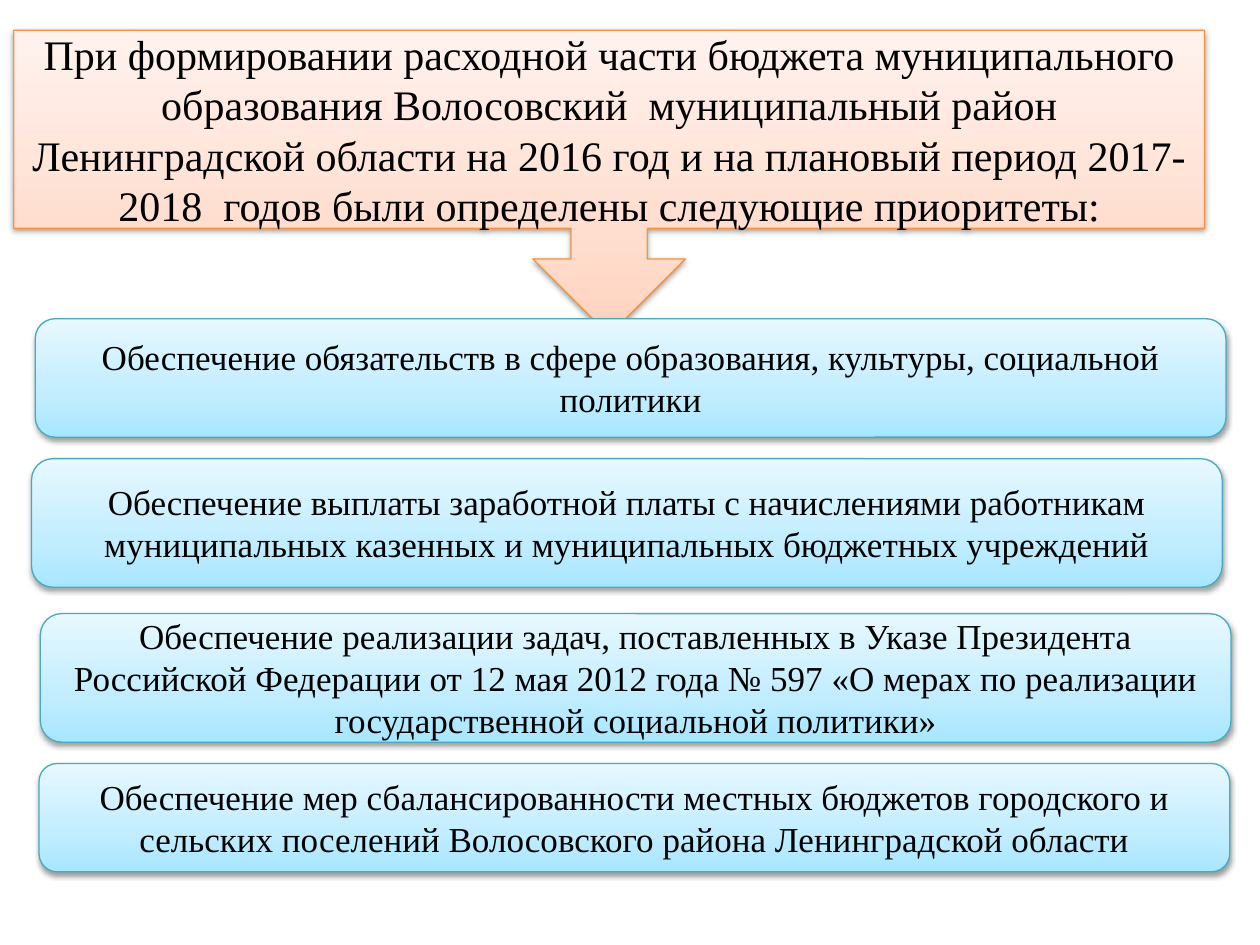
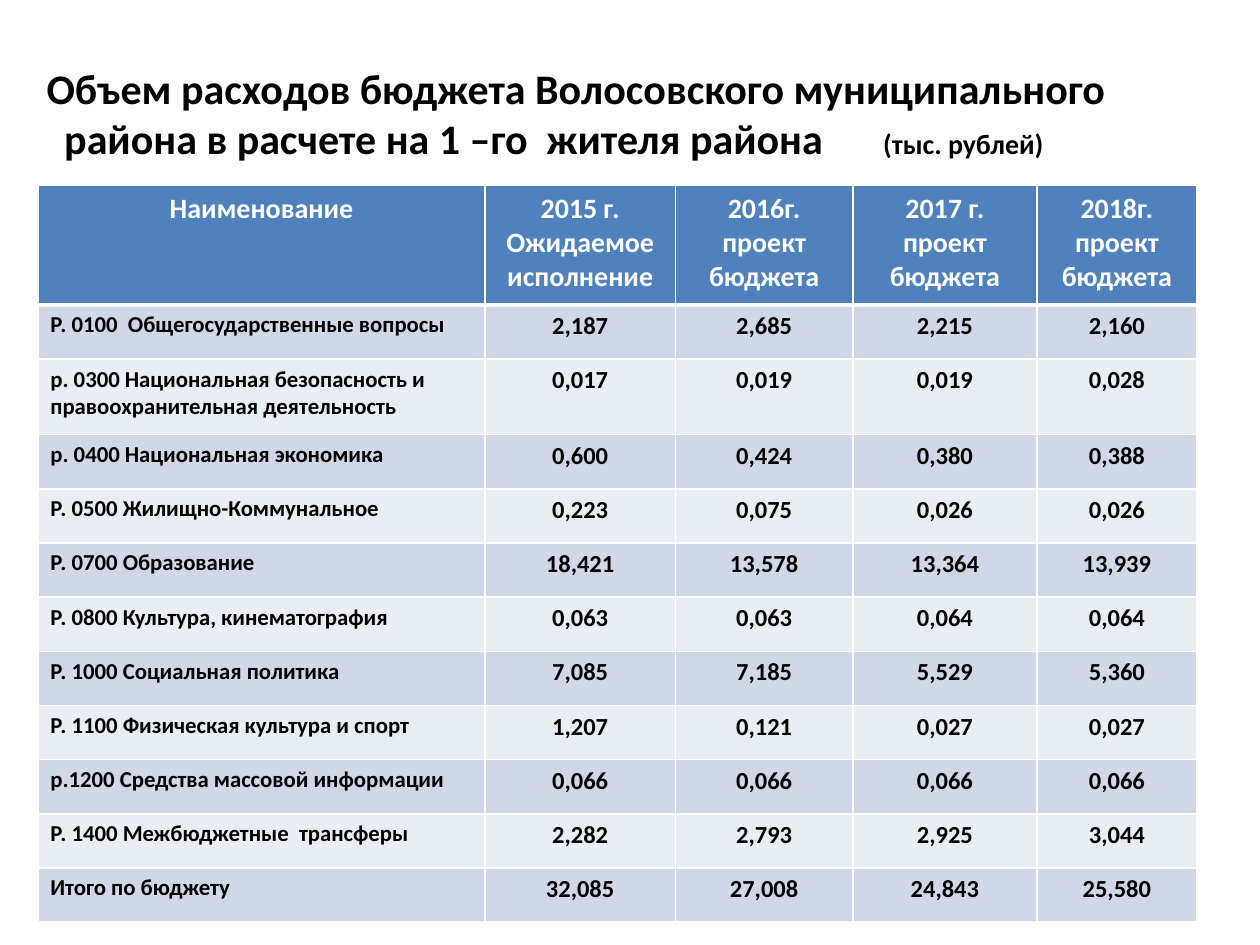
from copy import deepcopy

from pptx import Presentation
from pptx.dml.color import RGBColor
from pptx.enum.shapes import MSO_SHAPE
from pptx.enum.text import MSO_ANCHOR, PP_ALIGN
from pptx.oxml.ns import qn
from pptx.util import Inches, Pt
from lxml import etree

CALLOUT = MSO_SHAPE.DOWN_ARROW_CALLOUT
ROUND = MSO_SHAPE.ROUNDED_RECTANGLE
LEFT, CENTER = PP_ALIGN.LEFT, PP_ALIGN.CENTER
MIDDLE = MSO_ANCHOR.MIDDLE

BLACK = RGBColor(0x00, 0x00, 0x00)
WHITE = RGBColor(0xFF, 0xFF, 0xFF)
ORANGE = RGBColor(0xF6, 0x92, 0x40)
TEAL = RGBColor(0x46, 0xAA, 0xC5)
BLUE = RGBColor(0x4F, 0x81, 0xBD)
BANDS = RGBColor(0xD0, 0xD8, 0xE8), RGBColor(0xE9, 0xED, 0xF4)
PEACH = (RGBColor(0xFF, 0xD2, 0xBD), RGBColor(0xFF, 0xDE, 0xD0),
         RGBColor(0xFF, 0xF2, 0xED))
SKY = (RGBColor(0xA7, 0xE6, 0xFF), RGBColor(0xC1, 0xED, 0xFF),
       RGBColor(0xE7, 0xF8, 0xFF))
STOPS = 0, 0.35, 1

SERIF = {"name": "Times New Roman", "size": Pt(24)}
GOAL = SERIF | {"size": Pt(20)}
TITLE = {"name": "Calibri", "size": Pt(24), "bold": True}
UNIT = TITLE | {"size": Pt(16)}
HEAD = UNIT
LABEL = TITLE | {"size": Pt(13)}
VALUE = TITLE | {"size": Pt(14)}

INTRO = ("При формировании расходной части бюджета муниципального образования "
         "Волосовский  муниципальный район Ленинградской области на 2016 год и на "
         "плановый период 2017-2018  годов были определены следующие приоритеты:")
GOALS = [
    (0.28, 2.53, 0.94, "Обеспечение обязательств в сфере образования, культуры, "
     "социальной политики"),
    (0.25, 3.64, 1.02, "Обеспечение выплаты заработной платы с начислениями "
     "работникам муниципальных казенных и муниципальных бюджетных учреждений"),
    (0.32, 4.87, 1.02, "Обеспечение реализации задач, поставленных в Указе "
     "Президента Российской Федерации от 12 мая 2012 года № 597 «О мерах по "
     "реализации государственной социальной политики»"),
    (0.31, 6.06, 0.86, "Обеспечение мер сбалансированности местных бюджетов "
     "городского и сельских поселений Волосовского района Ленинградской области"),
]
WIDE = 9.45

COSTS = [
    ("Наименование", "2015 г.\nОжидаемое исполнение", "2016г.\nпроект бюджета",
     "2017 г. проект бюджета", "2018г. проект бюджета"),
    ("Р. 0100  Общегосударственные вопросы", "2,187", "2,685", "2,215", "2,160"),
    ("р. 0300 Национальная безопасность и правоохранительная деятельность",
     "0,017", "0,019", "0,019", "0,028"),
    ("р. 0400 Национальная экономика", "0,600", "0,424", "0,380", "0,388"),
    ("Р. 0500 Жилищно-Коммунальное", "0,223", "0,075", "0,026", "0,026"),
    ("Р. 0700 Образование", "18,421", "13,578", "13,364", "13,939"),
    ("Р. 0800 Культура, кинематография", "0,063", "0,063", "0,064", "0,064"),
    ("Р. 1000 Социальная политика", "7,085", "7,185", "5,529", "5,360"),
    ("Р. 1100 Физическая культура и спорт", "1,207", "0,121", "0,027", "0,027"),
    ("р.1200 Средства массовой информации", "0,066", "0,066", "0,066", "0,066"),
    ("Р. 1400 Межбюджетные  трансферы", "2,282", "2,793", "2,925", "3,044"),
    ("Итого по бюджету", "32,085", "27,008", "24,843", "25,580"),
]
COLS = 3.55, 1.51, 1.41, 1.46, 1.27
ROWS = [0.95, 0.43, 0.6] + [0.43] * 9


def add(parent, tag, **attrs):
    return etree.SubElement(parent, qn(tag), {k: str(v) for k, v in attrs.items()})


def style(font, form, color):
    for key, value in form.items():
        setattr(font, key, value)
    font.color.rgb = color


class Deck:
    def __init__(self):
        self.prs = Presentation()
        self.prs.slide_width, self.prs.slide_height = Inches(10), Inches(7.5)

    def page(self):
        self.slide = self.prs.slides.add_slide(self.prs.slide_layouts[6])

    def label(self, frame, text, form, color=BLACK, align=CENTER):
        frame.word_wrap = True
        frame.text = text
        for para in frame.paragraphs:
            para.alignment = align
            for run in para.runs:
                style(run.font, form, color)

    def blend(self, shape, colors):
        """Fill upwards with a three-stop gradient."""
        shape.fill.gradient()
        shape.fill.gradient_angle = 90
        stops = shape._element.spPr.find(qn("a:gradFill")).find(qn("a:gsLst"))
        stops.append(deepcopy(stops[0]))
        for stop, color, place in zip(shape.fill.gradient_stops, colors, STOPS):
            stop.color.rgb = color
            stop.position = place

    def shade(self, shape):
        shape.shadow.inherit = False
        effects = shape._element.spPr.find(qn("a:effectLst"))
        outer = add(effects, "a:outerShdw", blurRad=Pt(3.1), dist=Pt(1.6),
                    dir=5400000, rotWithShape=0)
        add(add(outer, "a:srgbClr", val=BLACK), "a:alpha", val=38000)

    def box(self, kind, left, top, width, height, text, form, colors, edge):
        shape = self.slide.shapes.add_shape(
            kind, *map(Inches, (left, top, width, height)))
        self.blend(shape, colors)
        shape.line.color.rgb = edge
        shape.line.width = Pt(0.75)
        self.shade(shape)
        shape.text_frame.vertical_anchor = MIDDLE
        self.label(shape.text_frame, text, form)

    def title(self, text, unit):
        """Add a title with a hanging indent and its unit at a tab stop."""
        frame = self.slide.shapes.add_textbox(
            *map(Inches, (0.07, 0.27, 9, 1.25))).text_frame
        frame.vertical_anchor = MIDDLE
        frame.margin_left = Inches(0.3)
        self.label(frame, text + "\t", TITLE, align=LEFT)
        para = frame.paragraphs[0]
        run = para.add_run()
        run.text = unit
        style(run.font, UNIT, BLACK)
        props = para._p.get_or_add_pPr()
        props.set("marL", str(Inches(0.14)))
        props.set("indent", str(-Inches(0.14)))
        add(add(props, "a:tabLst"), "a:tab", pos=Inches(7), algn="l")

    def rule(self, cell, row):
        """Draw white borders, with a thick one under the header."""
        props = cell._tc.get_or_add_tcPr()
        for side in "LRTB":
            thick = (row, side) in ((0, "B"), (1, "T"))
            line = add(props, "a:ln" + side, w=Pt(3 if thick else 1))
            add(add(line, "a:solidFill"), "a:srgbClr", val=WHITE)

    def table(self, left, top, cols, rows, data):
        table = self.slide.shapes.add_table(
            len(rows), len(cols),
            *map(Inches, (left, top, sum(cols), sum(rows)))).table
        for col, width in zip(table.columns, cols):
            col.width = Inches(width)
        for r, (height, texts) in enumerate(zip(rows, data)):
            table.rows[r].height = Inches(height)
            for c, text in enumerate(texts):
                cell = table.cell(r, c)
                self.rule(cell, r)
                cell.fill.solid()
                cell.fill.fore_color.rgb = BANDS[(r - 1) % 2] if r else BLUE
                if r == 0:
                    self.label(cell.text_frame, text, HEAD, WHITE)
                elif c == 0:
                    self.label(cell.text_frame, text, LABEL, align=LEFT)
                else:
                    self.label(cell.text_frame, text, VALUE)


def main():
    deck = Deck()

    deck.page()
    deck.box(CALLOUT, 0.11, 0.24, WIDE, 2.42, INTRO, SERIF, PEACH, ORANGE)
    for left, top, height, text in GOALS:
        deck.box(ROUND, left, top, WIDE, height, text, GOAL, SKY, TEAL)

    deck.page()
    deck.title("Объем расходов бюджета Волосовского муниципального района "
               "в расчете на 1 –го  жителя района", "(тыс. рублей)")
    deck.table(0.3, 1.47, COLS, ROWS, COSTS)

    deck.prs.save("out.pptx")


if __name__ == "__main__":
    main()
